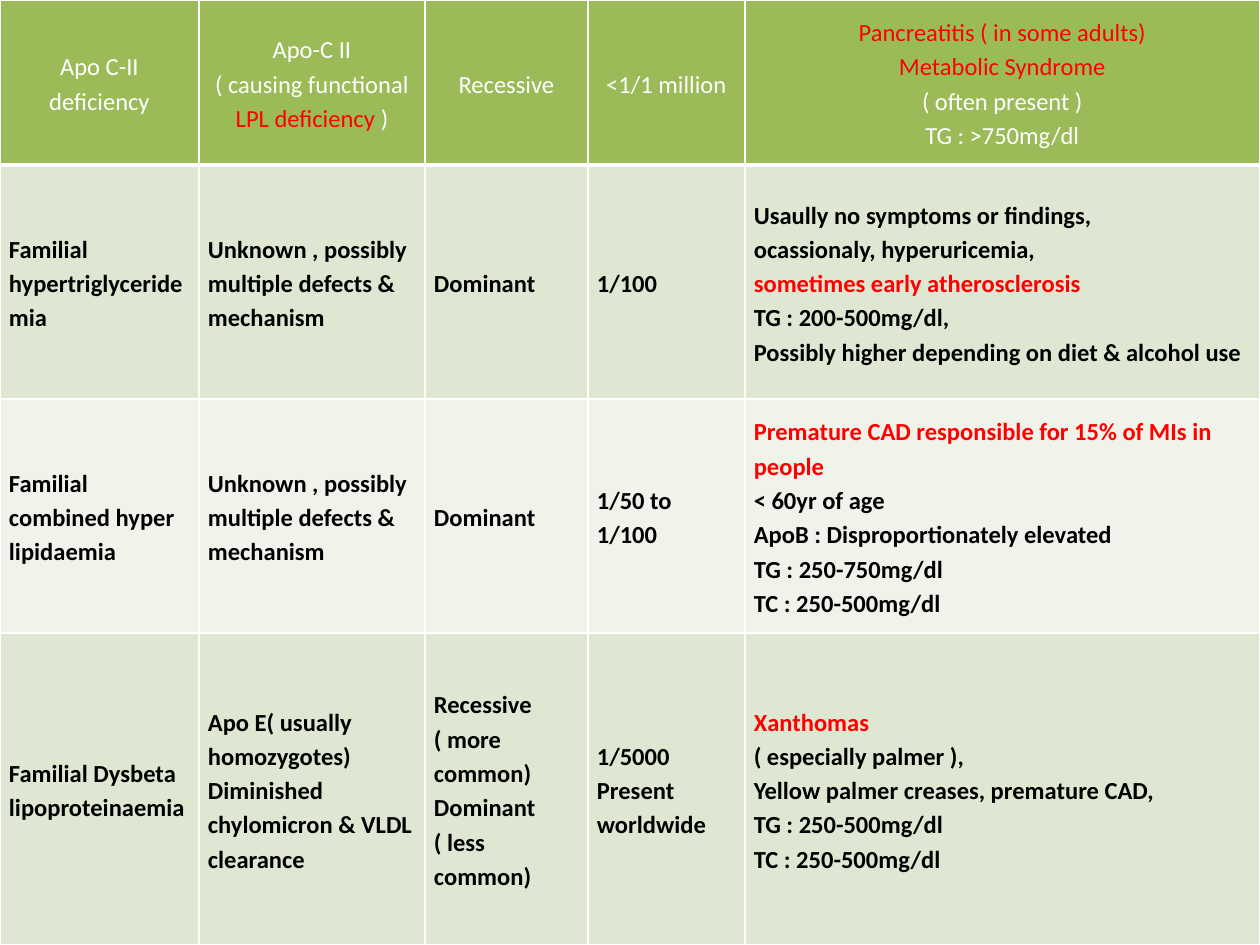
from lxml.etree import SubElement
from pptx import Presentation
from pptx.dml.color import RGBColor as RGB
from pptx.enum.text import MSO_ANCHOR as ANCHOR, PP_ALIGN as ALIGN
from pptx.oxml.ns import qn
from pptx.util import Pt

SCALE = 914400 / 126  # EMU per px
COLORS = {"header": "9BBB59", "dark band": "DEE7D1", "light band": "EFF3EA",
          "white": "FFFFFF", "black": "000000", "red": "FF0000"}
COL_WIDTHS = [199, 226, 163, 157, 515]
ROW_HEIGHTS = [165, 234, 234, 312]
BANDS = ["header", "dark band", "light band", "dark band"]

# One list of paragraphs per cell; text between asterisks is red
ROWS = [
    [["Apo C-II deficiency"],
     ["Apo-C II", "( causing functional *LPL deficiency *)"],
     ["Recessive"],
     ["<1/1 million"],
     ["*Pancreatitis ( in some adults)*", "*Metabolic Syndrome*",
      "( often present )", "TG : >750mg/dl"]],
    [["Familial hypertriglyceridemia"],
     ["Unknown , possibly multiple defects & mechanism"],
     ["Dominant"],
     ["1/100"],
     ["Usaully no symptoms or findings,", "ocassionaly, hyperuricemia,",
      "*sometimes early atherosclerosis*", "TG : 200-500mg/dl,",
      "Possibly higher depending on diet & alcohol use"]],
    [["Familial combined hyper lipidaemia"],
     ["Unknown , possibly multiple defects & mechanism"],
     ["Dominant"],
     ["1/50 to 1/100"],
     ["*Premature CAD responsible for 15% of MIs in people*",
      "< 60yr of age", "ApoB : Disproportionately elevated",
      "TG : 250-750mg/dl", "TC : 250-500mg/dl"]],
    [["Familial Dysbeta lipoproteinaemia"],
     ["Apo E( usually homozygotes)",
      "Diminished chylomicron & VLDL clearance"],
     ["Recessive", "( more common)", "Dominant", "( less common)"],
     ["1/5000", "Present worldwide"],
     ["*Xanthomas*", "( especially palmer ),",
      "Yellow palmer creases, premature CAD,",
      "TG : 250-500mg/dl", "TC : 250-500mg/dl"]],
]


def px(n):
    return round(n * SCALE)


def add_borders(cell, bottom):
    tcPr = cell._tc.get_or_add_tcPr()
    for side, width in (("L", 1), ("R", 1), ("T", 1), ("B", bottom)):
        ln = SubElement(tcPr, qn(f"a:ln{side}"), w=str(Pt(width)))
        fill = SubElement(ln, qn("a:solidFill"))
        SubElement(fill, qn("a:srgbClr"), val=COLORS["white"])


prs = Presentation()
prs.slide_width, prs.slide_height = px(1260), px(945)
s = prs.slides.add_slide(prs.slide_layouts[6])

# Table grid
table = s.shapes.add_table(len(ROWS), len(COL_WIDTHS), 0, 0,
                           px(1260), px(945)).table
table.first_row = table.horz_banding = False
for col, width in zip(table.columns, COL_WIDTHS):
    col.width = px(width)
for row, height in zip(table.rows, ROW_HEIGHTS):
    row.height = px(height)

# Cells
for i, (row, band) in enumerate(zip(ROWS, BANDS)):
    header = i == 0
    for j, lines in enumerate(row):
        cell = table.cell(i, j)
        add_borders(cell, bottom=3 if header else 1)
        cell.fill.solid()
        cell.fill.fore_color.rgb = RGB.from_string(COLORS[band])
        cell.vertical_anchor = ANCHOR.MIDDLE
        cell.margin_left = cell.margin_right = px(9)
        cell.margin_top = cell.margin_bottom = 0

        tf = cell.text_frame
        for k, line in enumerate(lines):
            p = tf.add_paragraph() if k else tf.paragraphs[0]
            p.alignment = ALIGN.CENTER if header else ALIGN.LEFT
            p.line_spacing = 1.15
            for n, text in enumerate(line.split("*")):
                if not text:
                    continue
                r = p.add_run()
                r.text = text
                r.font.name = "Calibri"
                r.font.size = Pt(14)
                r.font.bold = not header
                color = "red" if n % 2 else "white" if header else "black"
                r.font.color.rgb = RGB.from_string(COLORS[color])

prs.save("out.pptx")
